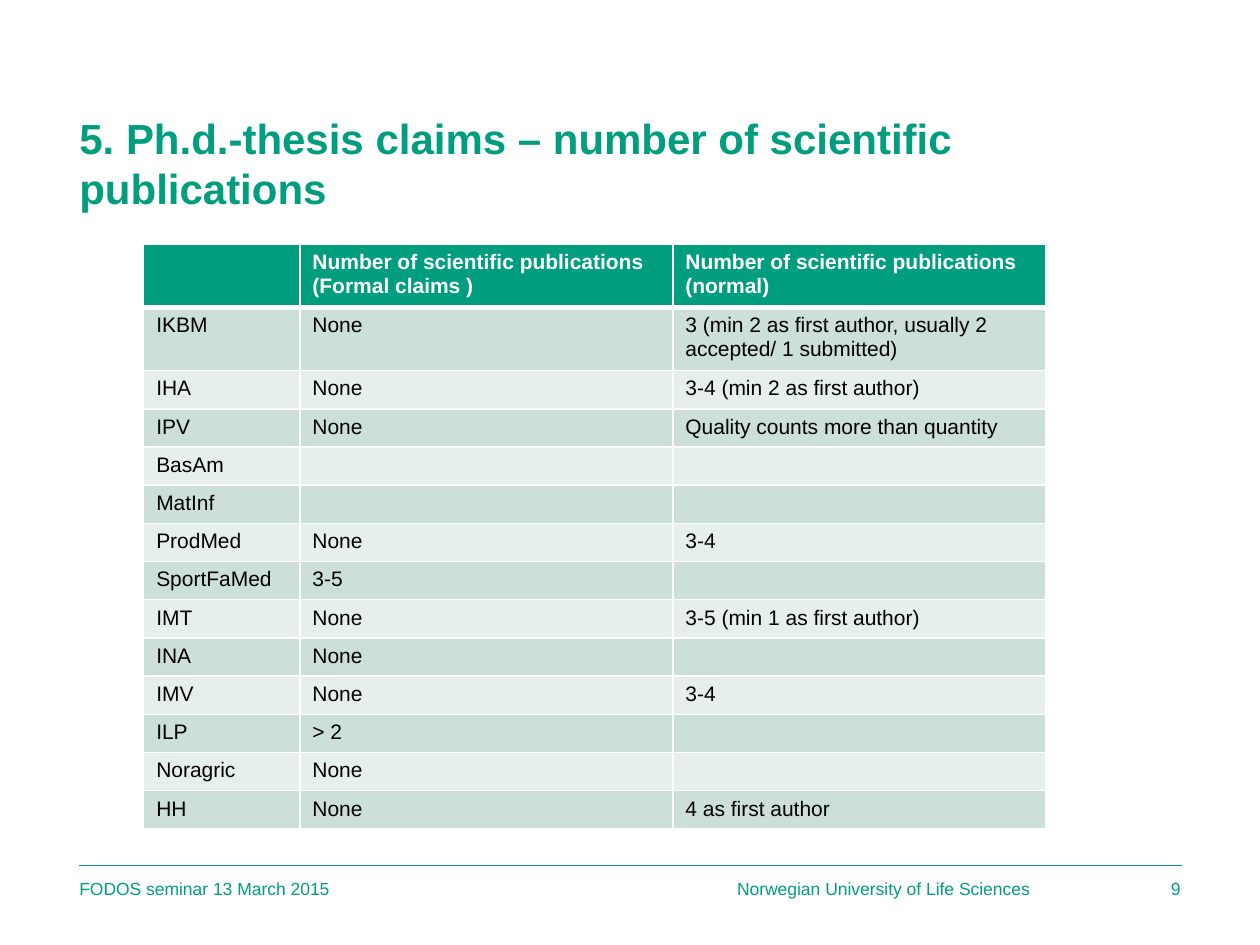
from typing import NamedTuple

from lxml import etree
from pptx import Presentation
from pptx import util as u
from pptx.dml.color import RGBColor
from pptx.enum import shapes, text
from pptx.oxml.ns import qn

GREEN, WHITE, BLACK = "009D7F", "FFFFFF", "000000"
BANDS = ("CCDFD8", "E7EFEC")
FONT = "Arial"


class Footer(NamedTuple):
    label: str
    left: float
    width: float
    align: text.PP_ALIGN = text.PP_ALIGN.LEFT


FOOTERS = [
    Footer("Norwegian University of Life Sciences", 5.85, 3.16),
    Footer("FODOS seminar 13 March 2015", 0.63, 5.2),
    Footer("9", 9.04, 0.33, text.PP_ALIGN.RIGHT),
]

ROWS = [
    ("", "Number of scientific publications (Formal claims )",
     "Number of scientific publications (normal)"),
    ("IKBM", "None", "3 (min 2 as first author, usually 2 accepted/ 1 submitted)"),
    ("IHA", "None", "3-4 (min 2 as first author)"),
    ("IPV", "None", "Quality counts more than quantity"),
    ("BasAm", "", ""),
    ("MatInf", "", ""),
    ("ProdMed", "None", "3-4"),
    ("SportFaMed", "3-5", ""),
    ("IMT", "None", "3-5 (min 1 as first author)"),
    ("INA", "None", ""),
    ("IMV", "None", "3-4"),
    ("ILP", "> 2", ""),
    ("Noragric", "None", ""),
    ("HH", "None", "4 as first author"),
]
COLUMN_WIDTHS = (1.24, 2.96, 2.96)
ROW_HEIGHTS = [0.46, 0.48] + [3.64 / 12] * 12


def rgb(value: str) -> RGBColor:
    return RGBColor.from_string(value)


def style_text(frame, size: float, color: str, bold: bool = False) -> None:
    for para in frame.paragraphs:
        for span in para.runs:
            span.font.name = FONT
            span.font.size = u.Pt(size)
            span.font.bold = bold
            span.font.color.rgb = rgb(color)
        if not para.runs:  # keeps empty cells from growing
            etree.SubElement(para._p, qn("a:endParaRPr"), sz=str(int(size * 100)))


def clear_margins(frame) -> None:
    frame.margin_left = frame.margin_top = 0
    frame.margin_right = frame.margin_bottom = 0
    frame.word_wrap = True


def set_borders(cell, top: float, bottom: float) -> None:
    properties = cell._tc.get_or_add_tcPr()
    sides = (("lnL", 1), ("lnR", 1), ("lnT", top), ("lnB", bottom))
    for position, (side, points) in enumerate(sides):
        line = etree.Element(qn(f"a:{side}"), w=str(u.Pt(points)))
        fill = etree.SubElement(line, qn("a:solidFill"))
        etree.SubElement(fill, qn("a:srgbClr"), val=WHITE)
        properties.insert(position, line)


def add_footer(slide, footer: Footer) -> None:
    box = slide.shapes.add_textbox(
        u.Inches(footer.left), u.Inches(6.97), u.Inches(footer.width), u.Inches(0.17))
    frame = box.text_frame
    clear_margins(frame)
    frame.vertical_anchor = text.MSO_ANCHOR.MIDDLE
    frame.text = footer.label
    frame.paragraphs[0].alignment = footer.align
    style_text(frame, 10, GREEN)


def add_claims_table(slide) -> None:
    table = slide.shapes.add_table(
        len(ROWS), len(COLUMN_WIDTHS), u.Inches(1.14), u.Inches(1.94),
        u.Inches(sum(COLUMN_WIDTHS)), u.Inches(sum(ROW_HEIGHTS))).table
    for column, width in zip(table.columns, COLUMN_WIDTHS):
        column.width = u.Inches(width)
    for index, (row, height, values) in enumerate(zip(table.rows, ROW_HEIGHTS, ROWS)):
        row.height = u.Inches(height)
        header = index == 0
        for cell, value in zip(row.cells, values):
            cell.text_frame.text = value
            style_text(cell.text_frame, 12, WHITE if header else BLACK, header)
            cell.fill.solid()
            cell.fill.fore_color.rgb = rgb(GREEN if header else BANDS[(index - 1) % 2])
            set_borders(cell, top=3 if index == 1 else 1, bottom=3 if header else 1)


def main() -> None:
    deck = Presentation()
    deck.slide_width, deck.slide_height = u.Inches(10), u.Inches(7.5)
    slide = deck.slides.add_slide(deck.slide_layouts[5])

    # Title
    title = slide.shapes.title
    title.left, title.top = u.Inches(0.63), u.Inches(0.88)
    title.width, title.height = u.Inches(7.46), u.Inches(0.81)
    frame = title.text_frame
    clear_margins(frame)
    frame.vertical_anchor = text.MSO_ANCHOR.BOTTOM
    frame.text = "5. Ph.d.-thesis claims – number of scientific publications"
    frame.paragraphs[0].alignment = text.PP_ALIGN.LEFT
    style_text(frame, 24, GREEN, True)

    # Footer rule and texts
    rule = slide.shapes.add_connector(
        shapes.MSO_CONNECTOR.STRAIGHT,
        u.Inches(0.63), u.Inches(6.87), u.Inches(9.38), u.Inches(6.87))
    rule.line.color.rgb = rgb(GREEN)
    rule.line.width = u.Pt(1)
    etree.SubElement(rule._element.spPr, qn("a:effectLst"))
    for footer in FOOTERS:
        add_footer(slide, footer)

    # Claims by department
    add_claims_table(slide)
    deck.save("out.pptx")


if __name__ == "__main__":
    main()
